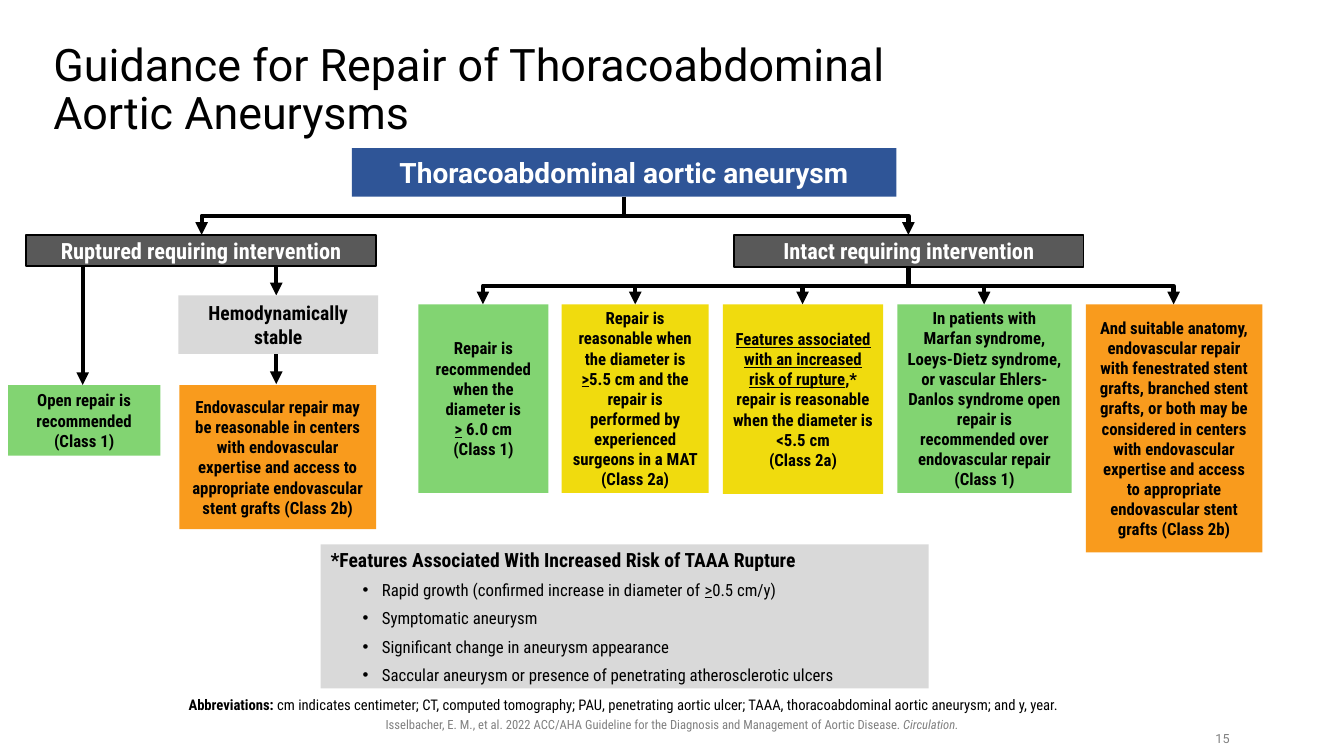
from copy import deepcopy

from lxml import etree
from pptx import Presentation
from pptx import util as u
from pptx.dml.color import RGBColor
from pptx.enum import shapes, text
from pptx.oxml.ns import qn

PX = 9144  # 100 px to the inch
BODY = "Roboto Condensed"
GREEN, YELLOW, ORANGE = "82D472", "F0DB0E", "F99B1D"
BLUE, DARK, LIGHT = "2F5597", "595959", "D9D9D9"
BLACK, WHITE, GREY = "000000", "FFFFFF", "808080"


def px(*lengths):
    return [u.Emu(round(n * PX)) for n in lengths]


def rgb(value):
    return RGBColor.from_string(value)


def style(r, size, color=BLACK, bold=False, name=BODY):
    r.font.size, r.font.bold, r.font.name = u.Pt(size), bold, name
    r.font.color.rgb = rgb(color)


def write(p, words, size, color=BLACK, bold=False, name=BODY):
    """Add runs to a paragraph; words between underscores are underlined."""
    for i, part in enumerate(words.split("_")):
        if part:
            r = p.add_run()
            r.text = part
            style(r, size, color, bold, name)
            if i % 2:
                r.font.underline = True


def frame(sp, inset=(10, 5, 10, 5), anchor=text.MSO_ANCHOR.MIDDLE):
    tf = sp.text_frame
    tf.word_wrap = True
    tf.vertical_anchor = anchor
    tf.margin_left, tf.margin_top, tf.margin_right, tf.margin_bottom = px(*inset)
    return tf


def panel(s, box, fill, line=None):
    sp = s.shapes.add_shape(shapes.MSO_SHAPE.RECTANGLE, *px(*box))
    sp.shadow.inherit = False
    sp.fill.solid()
    sp.fill.fore_color.rgb = rgb(fill)
    if line:
        sp.line.color.rgb = rgb(line)
        sp.line.width = u.Pt(1)
    else:
        sp.line.fill.background()
    return sp


def node(s, box, fill, words, size=12, color=BLACK, line=None, name=BODY):
    tf = frame(panel(s, box, fill, line))
    for i, part in enumerate(words.split("\n")):
        p = tf.add_paragraph() if i else tf.paragraphs[0]
        p.alignment = text.PP_ALIGN.CENTER
        write(p, part, size, color, True, name)


def label(s, box, inset=(10, 5, 10, 5)):
    tf = frame(s.shapes.add_textbox(*px(*box)), inset, text.MSO_ANCHOR.TOP)
    p = tf.paragraphs[0]
    p.alignment = text.PP_ALIGN.CENTER
    return p


def arrow(s, x1, y1, x2, y2):
    """Draw a downward arrow, bent halfway down when the ends are not aligned."""
    if x1 == x2:
        c = s.shapes.add_connector(shapes.MSO_CONNECTOR.STRAIGHT, *px(x1, y1, x2, y2))
    else:
        # Lay the elbow on its side, then turn it so that it leaves downwards
        mx, my = (x1 + x2) / 2, (y1 + y2) / 2
        half_h = abs(x2 - x1) / 2
        half_w = (y2 - y1) / 2 * (1 if x2 < x1 else -1)
        c = s.shapes.add_connector(
            shapes.MSO_CONNECTOR.ELBOW,
            *px(mx - half_w, my - half_h, mx + half_w, my + half_h))
        turn = 90 if x2 < x1 else 270
        c._element.spPr.find(qn("a:xfrm")).set("rot", str(turn * 60000))
    c.line.color.rgb = rgb(BLACK)
    c.line.width = u.Pt(3)
    etree.SubElement(c.line._get_or_add_ln(), qn("a:tailEnd"), type="triangle")
    etree.SubElement(c._element.spPr, qn("a:effectLst"))


def title(s, box):
    sp = s.shapes.title
    sp.left, sp.top, sp.width, sp.height = px(*box)
    tf = frame(sp, (0, 0, 0, 0))
    tf.auto_size = text.MSO_AUTO_SIZE.NONE
    tf.text = "Guidance for Repair of Thoracoabdominal\vAortic Aneurysms"
    p = tf.paragraphs[0]
    p.alignment = text.PP_ALIGN.LEFT
    p.line_spacing = 0.9
    for r in p.runs:
        style(r, 32, name="Roboto")
    # The line break takes the size of the words around it
    p._p.find(qn("a:br")).append(deepcopy(p.runs[0]._r.rPr))


def ruptured_branch(s, x, y):
    arrow(s, x + 56, y + 30, x + 56, y + 149)
    arrow(s, x + 248, y + 30, x + 248, y + 60)
    arrow(s, x + 248, y + 118, x + 248, y + 148)
    node(s, (x, y, 347, 31), DARK, "Ruptured requiring intervention", 16, WHITE, BLACK)
    node(s, (x - 18, y + 149, 151, 70), GREEN, "Open repair is recommended (Class 1)")
    node(s, (x + 151, y + 60, 198, 58), LIGHT, "Hemodynamically stable", 14)
    node(s, (x + 152, y + 149, 195, 143), ORANGE,
         "Endovascular repair may be reasonable in centers with endovascular "
         "expertise and access to appropriate endovascular stent grafts (Class 2b)")


def intact_branch(s, x, y):
    # Left, width, height, fill and words of each option
    options = [
        (415, 129, 187, GREEN,
         "Repair is recommended when the diameter is\n_>_ 6.0 cm\n(Class 1)"),
        (557, 146, 187, YELLOW,
         "Repair is reasonable when the diameter is\n_>_5.5 cm and the repair is "
         "performed by experienced surgeons in a MAT (Class 2a)"),
        (717, 159, 188, YELLOW,
         "_Features associated with an increased risk of rupture_,* repair is "
         "reasonable when the diameter is <5.5 cm\n(Class 2a)"),
        (890, 173, 187, GREEN,
         "In patients with Marfan syndrome, Loeys-Dietz syndrome, or vascular "
         "Ehlers-Danlos syndrome open repair is recommended over endovascular "
         "repair (Class 1)"),
        (1077, 175, 246, ORANGE,
         "And suitable anatomy, endovascular repair with fenestrated stent grafts, "
         "branched stent grafts, or both may be considered in centers with "
         "endovascular expertise and access to appropriate endovascular stent "
         "grafts (Class 2b)"),
    ]
    node(s, (x, y, 347, 32), DARK, "Intact requiring intervention", 16, WHITE, BLACK)
    top = y + 69
    for left, width, height, fill, words in options:
        node(s, (left, top, width, height), fill, words)
        arrow(s, x + 173, y + 32, left + width // 2, top)


def risk_features(s, box):
    tf = frame(panel(s, box, LIGHT))
    tf.paragraphs[0].alignment = text.PP_ALIGN.LEFT
    write(tf.paragraphs[0], "*Features Associated With Increased Risk of TAAA Rupture",
          14, bold=True)
    for words in ("Rapid growth (confirmed increase in diameter of _>_0.5 cm/y)",
                  "Symptomatic aneurysm",
                  "Significant change in aneurysm appearance",
                  "Saccular aneurysm or presence of penetrating atherosclerotic ulcers"):
        p = tf.add_paragraph()
        p.alignment = text.PP_ALIGN.LEFT
        p.space_before = u.Pt(6)
        pPr = p._p.get_or_add_pPr()
        indent, hang = px(51, -19)
        pPr.set("marL", str(indent))
        pPr.set("indent", str(hang))
        etree.SubElement(pPr, qn("a:buFont"), typeface="Arial")
        etree.SubElement(pPr, qn("a:buChar"), char="•")
        write(p, words, 12)


def footer(s):
    p = label(s, (170, 687, 907, 26), (0, 5, 10, 5))
    p.line_spacing = 0.9
    write(p, "Abbreviations: ", 10.5, bold=True)
    write(p, "cm indicates centimeter; CT, computed tomography; PAU, penetrating "
          "aortic ulcer; TAAA, thoracoabdominal aortic aneurysm; and y, year.", 10.5)
    p = label(s, (181, 706, 971, 25))
    write(p, "Isselbacher, E. M., et al. 2022 ACC/AHA Guideline for the Diagnosis "
          "and Management of Aortic Disease. ", 9, GREY)
    write(p, "Circulation.", 9, GREY)
    p.runs[-1].font.italic = True
    write(label(s, (1192, 720, 41, 26)), "15", 9, GREY, name="Roboto")


def main():
    prs = Presentation()
    prs.slide_width, prs.slide_height = px(1333, 750)
    s = prs.slides.add_slide(prs.slide_layouts[5])
    title(s, (53, 54, 1138, 72))
    # Decision tree
    for branch_x in (200, 901):
        arrow(s, 619, 195, branch_x, 233)
    node(s, (349, 147, 540, 48), BLUE, "Thoracoabdominal aortic aneurysm",
         20, WHITE, name="Roboto")
    ruptured_branch(s, 26, 233)
    intact_branch(s, 728, 233)
    # Notes below the tree
    risk_features(s, (318, 540, 603, 143))
    footer(s)
    prs.save("out.pptx")


if __name__ == "__main__":
    main()
